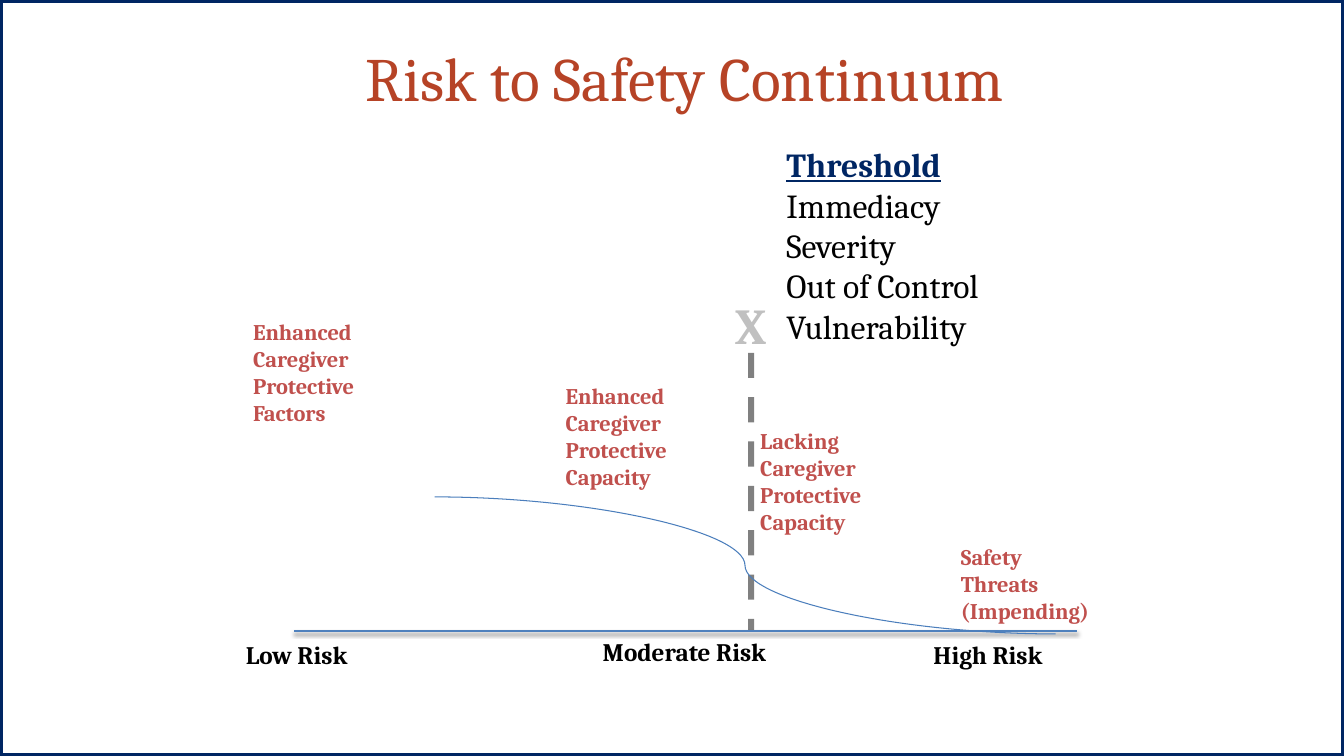
from lxml import etree
from pptx import Presentation
from pptx.dml.color import RGBColor
from pptx.enum.shapes import MSO_CONNECTOR, MSO_SHAPE
from pptx.enum.text import MSO_AUTO_SIZE, PP_ALIGN
from pptx.oxml.ns import qn
from pptx.util import Inches, Pt

FONT = "Cambria"
COLORS = {
    "navy": "002663",
    "title": "B64326",
    "factor": "C0504D",
    "marker": "C0C0C0",
    "dash": "808080",
    "axis": "4F81BD",
    "curve": "4B7EBC",
    "black": "000000",
}


def color(name):
    return RGBColor.from_string(COLORS[name])


def add_frame(page, width, height):
    frame = page.shapes.add_shape(MSO_SHAPE.RECTANGLE, 0, 0, width, height)
    frame.shadow.inherit = False
    frame.fill.background()
    frame.line.color.rgb = color("navy")
    frame.line.width = Pt(4.5)


def add_text(page, place, lines, size, tint, bold=False, align=PP_ALIGN.LEFT,
             wrap=True, inset=(0, 0)):
    box = page.shapes.add_textbox(*[Inches(value) for value in place])
    frame = box.text_frame
    frame.word_wrap = wrap
    frame.auto_size = MSO_AUTO_SIZE.SHAPE_TO_FIT_TEXT
    frame.margin_left = frame.margin_right = Inches(inset[0])
    frame.margin_top = frame.margin_bottom = Inches(inset[1])
    frame.text = "\n".join(lines)
    for para in frame.paragraphs:
        para.alignment = align
        para.font.name = FONT
        para.font.size = Pt(size)
        para.font.bold = bold
        para.font.color.rgb = color(tint)
    return box


def add_factor(page, place, text, wrap=True):
    add_text(page, place, text.split(), 16, "factor", bold=True, wrap=wrap)


def add_risk_label(page, place, text):
    add_text(page, place, [text], 18, "black", bold=True, inset=(0.1, 0.05))


def add_threshold_line(page, left, top, bottom):
    """Vertical dashed bar; the last dash is cut off at the axis."""
    width, dash, step = 0.06, 0.25, 0.44
    group = page.shapes.add_group_shape()
    for index in range(7):
        start = top + index * step
        bar = group.shapes.add_shape(
            MSO_SHAPE.RECTANGLE, Inches(left), Inches(start),
            Inches(width), Inches(min(dash, bottom - start)))
        bar.shadow.inherit = False
        bar.fill.solid()
        bar.fill.fore_color.rgb = color("dash")
        bar.line.fill.background()


def add_line(page, kind, start, end, tint, width):
    """Draw a connector and return its empty effect list."""
    line = page.shapes.add_connector(
        kind, *[Inches(value) for value in start + end])
    line.line.color.rgb = color(tint)
    line.line.width = Pt(width)
    return etree.SubElement(line._element.spPr, qn("a:effectLst"))


def add_soft_shadow(effects):
    shadow = etree.SubElement(
        effects, qn("a:outerShdw"), blurRad=str(Pt(3.1)), dist=str(Pt(1.6)),
        dir="5400000", rotWithShape="0")
    shade = etree.SubElement(shadow, qn("a:srgbClr"), val=COLORS["black"])
    etree.SubElement(shade, qn("a:alpha"), val="38000")


def main():
    deck = Presentation()
    deck.slide_width, deck.slide_height = Inches(13.33), Inches(7.5)
    page = deck.slides.add_slide(deck.slide_layouts[6])

    # Frame and title
    add_frame(page, deck.slide_width, deck.slide_height)
    add_text(page, (3.01, 0.4, 7.57, 0.74), ["Risk to Safety Continuum"],
             44, "title", align=PP_ALIGN.CENTER)

    # Threshold marker, dashed bar and criteria
    add_text(page, (7.29, 2.92, 0.41, 0.61), ["X"], 36, "marker",
             bold=True, wrap=False)
    add_threshold_line(page, 7.42, 3.5, 6.26)
    criteria = add_text(
        page, (7.8, 1.43, 2.7, 2.02),
        ["Threshold", "Immediacy", "Severity", "Out of Control",
         "Vulnerability"], 24, "black")
    heading = criteria.text_frame.paragraphs[0].font
    heading.bold = heading.underline = True
    heading.color.rgb = color("navy")

    # Risk axis and its labels
    add_soft_shadow(add_line(page, MSO_CONNECTOR.STRAIGHT,
                             (2.92, 6.26), (10.68, 6.26), "axis", 2))
    add_risk_label(page, (2.34, 6.29, 2.83, 0.4), "Low Risk")
    add_risk_label(page, (5.88, 6.26, 2.2, 0.4), "Moderate Risk")
    add_risk_label(page, (9.16, 6.29, 1.82, 0.4), "High Risk")

    # Falling curve and the factors along it
    add_line(page, MSO_CONNECTOR.CURVE, (4.31, 4.93), (10.47, 6.29),
             "curve", 0.75)
    add_factor(page, (2.51, 3.16, 1.25, 1.08),
               "Enhanced Caregiver Protective Factors")
    add_factor(page, (5.61, 3.79, 1.25, 1.08),
               "Enhanced Caregiver Protective Capacity")
    add_factor(page, (7.54, 4.24, 1.28, 1.08),
               "Lacking Caregiver Protective Capacity")
    add_factor(page, (9.53, 5.39, 1.53, 0.81),
               "Safety Threats (Impending)", wrap=False)

    deck.save("out.pptx")


if __name__ == "__main__":
    main()
